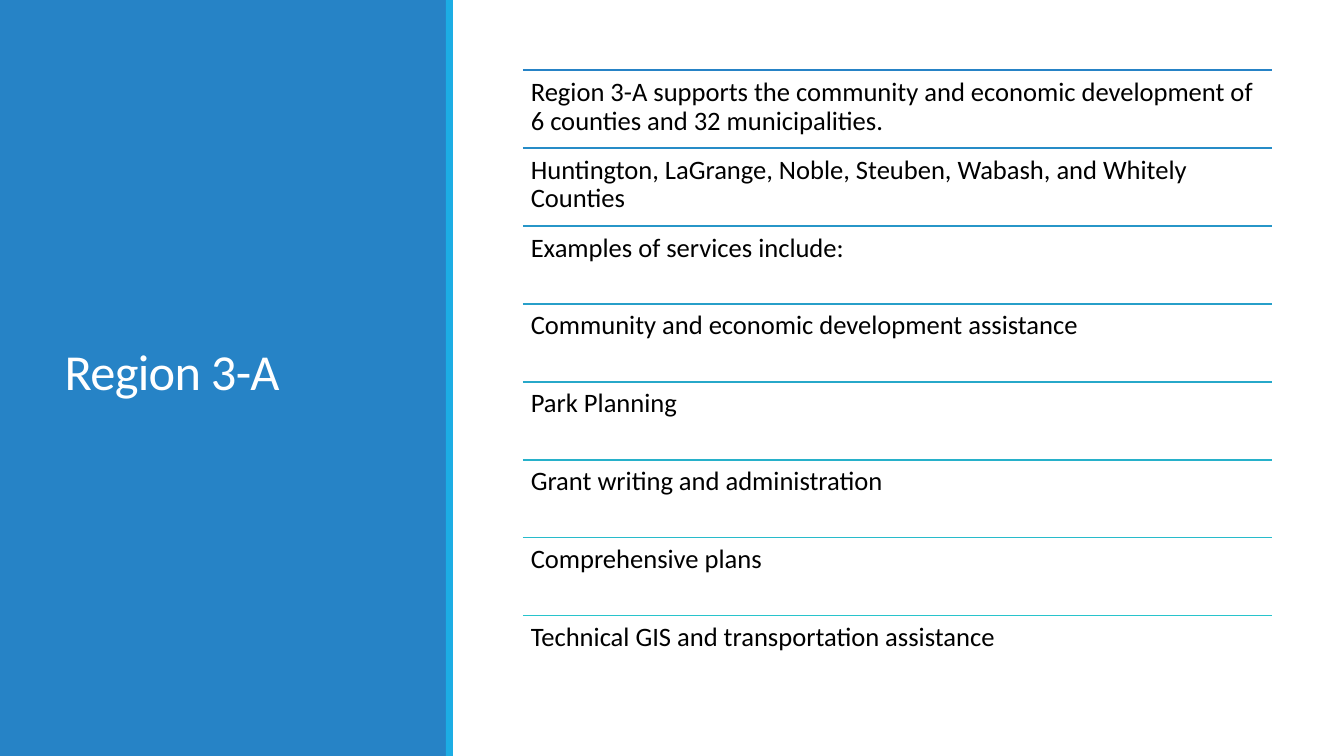
from lxml import etree
from pptx import Presentation
from pptx.dml.color import RGBColor
from pptx.enum.shapes import MSO_CONNECTOR, MSO_SHAPE
from pptx.enum.text import MSO_ANCHOR, MSO_AUTO_SIZE, PP_ALIGN
from pptx.oxml.ns import qn
from pptx.util import Pt

RECT, STRAIGHT = MSO_SHAPE.RECTANGLE, MSO_CONNECTOR.STRAIGHT
TOP, MIDDLE = MSO_ANCHOR.TOP, MSO_ANCHOR.MIDDLE
LEFT, NO_FIT = PP_ALIGN.LEFT, MSO_AUTO_SIZE.NONE

FONT = "Calibri"
COLORS = {
    "panel": "2683C6",
    "strip": "1CADE4",
    "white": "FFFFFF",
    "text": "000000",
    "rule_first": "2683C6",
    "rule_last": "28C4CC",
}
ITEMS = [
    "Region 3-A supports the community and economic development of "
    "6 counties and 32 municipalities.",
    "Huntington, LaGrange, Noble, Steuben, Wabash, and Whitely Counties",
    "Examples of services include:",
    "Community and economic development assistance",
    "Park Planning",
    "Grant writing and administration",
    "Comprehensive plans",
    "Technical GIS and transportation assistance",
]


def rgb(name):
    return RGBColor.from_string(COLORS[name])


def blend(first, last, share):
    return RGBColor(*(round(a + (b - a) * share)
                      for a, b in zip(rgb(first), rgb(last))))


def add_block(s, x, y, w, h, color):
    sp = s.shapes.add_shape(RECT, Pt(x), Pt(y), Pt(w), Pt(h))
    sp.shadow.inherit = False
    sp.fill.solid()
    sp.fill.fore_color.rgb = rgb(color)
    sp.line.fill.background()


def add_rule(s, x, y, w, color):
    line = s.shapes.add_connector(STRAIGHT, Pt(x), Pt(y), Pt(x + w), Pt(y))
    line.line.color.rgb = color
    line.line.width = Pt(1.25)
    etree.SubElement(line.element.spPr, qn("a:effectLst"))


def write(tf, text, size, color, spacing, anchor):
    tf.word_wrap = True
    tf.auto_size = NO_FIT
    tf.vertical_anchor = anchor
    p = tf.paragraphs[0]
    p.alignment = LEFT
    p.line_spacing = spacing
    r = p.add_run()
    r.text = text
    r.font.name = FONT
    r.font.size = Pt(size)
    r.font.color.rgb = rgb(color)
    return r


def add_title_panel(s, x, y, w, h):
    # Coloured panel and its edge strip
    add_block(s, x, y, w, h, "panel")
    add_block(s, x + w - 0.5, y, 5, h, "strip")
    # Title, brought in front of the panel
    title = s.shapes.title
    title.left, title.top = Pt(x + 39), Pt(y + 41)
    title.width, title.height = Pt(w - 76), Pt(h - 85.5)
    r = write(title.text_frame, "Region 3-A", 36, "white", 0.85, MIDDLE)
    r.font._element.set("spc", "-50")
    title.element.getparent().append(title.element)


def add_item_list(s, x, y, w, h):
    row_h = h / len(ITEMS)
    for i, item in enumerate(ITEMS):
        top = y + i * row_h
        add_rule(s, x, top, w,
                 blend("rule_first", "rule_last", i / (len(ITEMS) - 1)))
        box = s.shapes.add_textbox(Pt(x), Pt(top), Pt(w), Pt(row_h))
        tf = box.text_frame
        tf.margin_left = tf.margin_right = Pt(5.7)
        tf.margin_top = tf.margin_bottom = Pt(5.7)
        write(tf, item, 19, "text", 0.9, TOP)


def main():
    prs = Presentation()
    prs.slide_width, prs.slide_height = Pt(960), Pt(540)
    s = prs.slides.add_slide(prs.slide_layouts[5])
    s.background.fill.solid()
    s.background.fill.fore_color.rgb = rgb("white")
    add_title_panel(s, 0, 0, 319, 540)
    add_item_list(s, 373.5, 50.25, 535, 445)
    prs.save("out.pptx")


if __name__ == "__main__":
    main()
